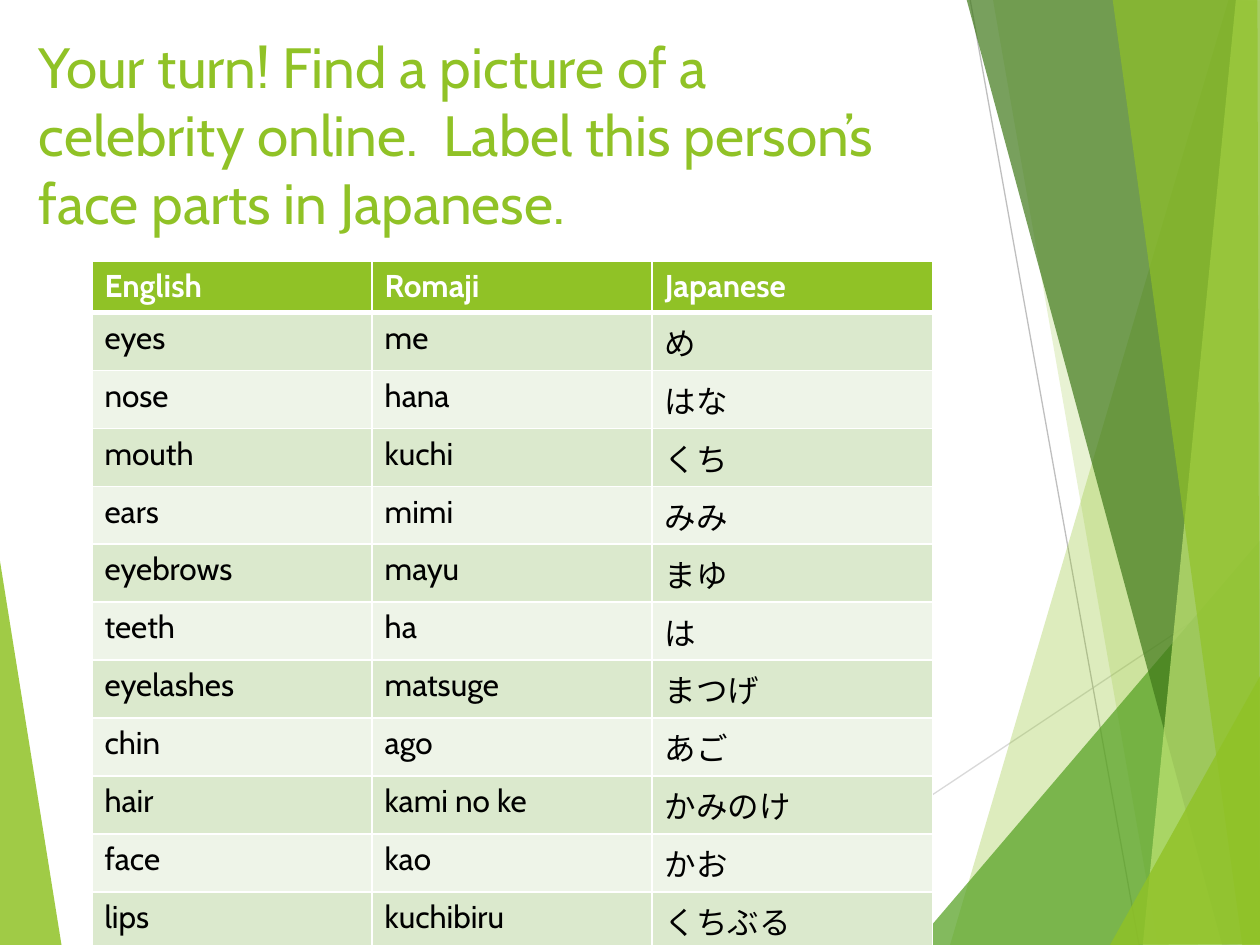
import pptx
import pptx.dml.color
import pptx.enum.shapes
import pptx.enum.text
import pptx.oxml
import pptx.oxml.ns
import pptx.util
from pptx.util import Inches

RGBColor = pptx.dml.color.RGBColor
LIME = RGBColor(0x90, 0xC2, 0x26)
GREEN = RGBColor(0x54, 0xA0, 0x21)
DARK_GREEN = RGBColor(0x3F, 0x78, 0x19)
PALE_LIME = RGBColor(0xC0, 0xE4, 0x74)
BAND_DARK = RGBColor(0xDB, 0xE9, 0xCD)
BAND_LIGHT = RGBColor(0xEE, 0xF4, 0xE8)
LIGHT_GRAY = RGBColor(0xD9, 0xD9, 0xD9)
GRAY = RGBColor(0xBF, 0xBF, 0xBF)
WHITE = RGBColor(0xFF, 0xFF, 0xFF)
BLACK = RGBColor(0x00, 0x00, 0x00)
FONT = "Cabin"
NS = pptx.oxml.ns.nsdecls("a")


def add_facet(corners, color, opacity):
    """Draw a borderless translucent polygon from corners in inches."""
    points = [(Inches(x), Inches(y)) for x, y in corners]
    builder = slide.shapes.build_freeform(*points[0])
    builder.add_line_segments(points[1:], close=True)
    facet = builder.convert_to_shape()
    facet.shadow.inherit = False
    facet.line.fill.background()
    facet.fill.solid()
    facet.fill.fore_color.rgb = color
    srgb = facet._element.spPr.find(".//" + pptx.oxml.ns.qn("a:srgbClr"))
    srgb.append(pptx.oxml.parse_xml(f'<a:alpha {NS} val="{opacity * 1000}"/>'))


def add_text(paragraph, text, size, color, bold=False):
    run = paragraph.add_run()
    run.text = text
    run.font.name = FONT
    run.font.size = pptx.util.Pt(size)
    run.font.bold = bold
    run.font.color.rgb = color


prs = pptx.Presentation()
prs.slide_width = Inches(10)
prs.slide_height = Inches(7.5)
slide = prs.slides.add_slide(prs.slide_layouts[6])

# Left wedge
add_facet([(-0.01, 4.39), (0.49, 7.51), (-0.01, 7.5)], LIME, 85)

# Thin rays behind the facets
rays = [
    ((5.61, 7.5), (10.01, 4.57), LIGHT_GRAY),
    ((7.7, 0), (9.04, 7.5), GRAY),
]
for (x1, y1), (x2, y2), color in rays:
    ray = slide.shapes.add_connector(
        pptx.enum.shapes.MSO_CONNECTOR.STRAIGHT,
        Inches(x1), Inches(y1), Inches(x2), Inches(y2))
    ray.line.color.rgb = color
    ray.line.width = pptx.util.Pt(0.75)
    ray._element.spPr.append(pptx.oxml.parse_xml(f"<a:effectLst {NS}/>"))

# Overlapping facets on the right, from back to front
facets = [
    ([(9.75, 0), (7.54, 7.5), (10.02, 7.51), (10.01, 0.01)], LIME, 30),
    ([(7.88, -0.01), (9.19, 7.5), (10.01, 7.5), (10.01, -0.01)], LIME, 20),
    ([(7.26, 7.5), (10, 4.29), (10.01, 7.5)], GREEN, 72),
    ([(7.67, -0.01), (9.7, 7.5), (10.01, 7.49), (10.01, -0.01)], DARK_GREEN, 70),
    ([(9.81, -0.01), (9.07, 7.5), (10.01, 7.5), (10, -0.01)], PALE_LIME, 70),
    ([(8.83, -0.01), (9.86, 7.5), (10, 7.5), (9.98, -0.01)], LIME, 65),
    ([(8.81, 7.5), (10.01, 5.35), (10.01, 7.49)], LIME, 80),
]
for corners, color, opacity in facets:
    add_facet(corners, color, opacity)

# Title
title = slide.shapes.add_textbox(Inches(0.21), Inches(0.2), Inches(6.94), Inches(1.44))
title.text_frame.word_wrap = True
title.text_frame.vertical_anchor = pptx.enum.text.MSO_ANCHOR.TOP
add_text(title.text_frame.paragraphs[0],
         "Your turn! Find a picture of a celebrity online.  "
         "Label this person’s face parts in Japanese.", 32.4, LIME)

# Vocabulary table
vocabulary = [
    ("English", "Romaji", "Japanese"),
    ("eyes", "me", "め"),
    ("nose", "hana", "はな"),
    ("mouth", "kuchi", "くち"),
    ("ears", "mimi", "みみ"),
    ("eyebrows", "mayu", "まゆ"),
    ("teeth", "ha", "は"),
    ("eyelashes", "matsuge", "まつげ"),
    ("chin", "ago", "あご"),
    ("hair", "kami no ke", "かみのけ"),
    ("face", "kao", "かお"),
    ("lips", "kuchibiru", "くちぶる"),
]
table = slide.shapes.add_table(
    len(vocabulary), 3, Inches(0.73), Inches(2.07), Inches(6.67), Inches(5.47)).table
for r, words in enumerate(vocabulary):
    header = r == 0
    table.rows[r].height = Inches(0.41 if header else 0.46)
    band = LIME if header else BAND_DARK if r % 2 else BAND_LIGHT
    # The rule between header and body is thicker than the others
    border_points = {"L": 1, "R": 1, "T": 3 if r == 1 else 1, "B": 3 if header else 1}
    for c, word in enumerate(words):
        cell = table.cell(r, c)
        cell.fill.solid()
        cell.fill.fore_color.rgb = band
        add_text(cell.text_frame.paragraphs[0], word, 18,
                 WHITE if header else BLACK, header)
        properties = cell._tc.get_or_add_tcPr()
        for i, (side, points) in enumerate(border_points.items()):
            properties.insert(i, pptx.oxml.parse_xml(
                f'<a:ln{side} {NS} w="{pptx.util.Pt(points)}"><a:solidFill>'
                f'<a:srgbClr val="{WHITE}"/></a:solidFill></a:ln{side}>'))

prs.save("out.pptx")
